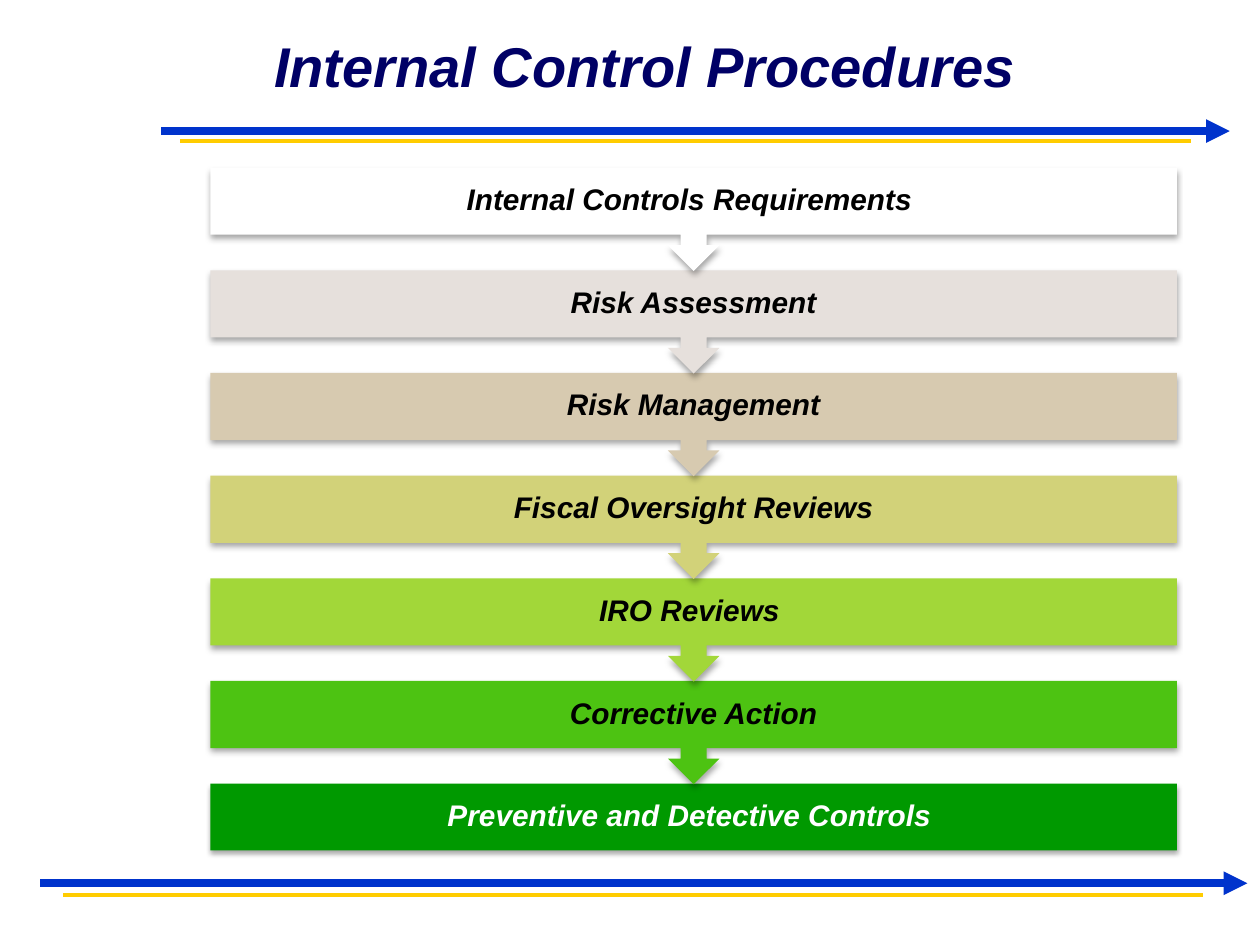
from lxml.etree import SubElement
from pptx import Presentation
from pptx.dml.color import RGBColor
from pptx.enum.shapes import MSO_CONNECTOR, MSO_SHAPE
from pptx.enum.text import MSO_ANCHOR, PP_ALIGN
from pptx.oxml.ns import qn
from pptx.util import Inches, Pt

NAVY = RGBColor(0x00, 0x00, 0x66)
BLUE = RGBColor(0x00, 0x33, 0xCC)
GOLD = RGBColor(0xFF, 0xCC, 0x00)
BLACK = RGBColor(0x00, 0x00, 0x00)
WHITE = RGBColor(0xFF, 0xFF, 0xFF)
STEPS = [
    ("Internal Controls Requirements ", WHITE),
    ("Risk Assessment", RGBColor(0xE6, 0xE0, 0xDC)),
    ("Risk Management", RGBColor(0xD7, 0xCA, 0xB0)),
    ("Fiscal Oversight Reviews", RGBColor(0xD2, 0xD2, 0x79)),
    ("IRO Reviews ", RGBColor(0xA2, 0xD7, 0x39)),
    ("Corrective Action", RGBColor(0x4D, 0xC3, 0x12)),
    ("Preventive and Detective Controls ", RGBColor(0x00, 0x99, 0x00)),
]
LEFT, TOP, WIDTH = 1.67, 1.33, 7.67
PITCH, BAR, CALL = 0.815, 0.53, 0.82


def place(shape, left, top, width, height):
    shape.left, shape.top = Inches(left), Inches(top)
    shape.width, shape.height = Inches(width), Inches(height)


def write(shape, text, size, color, side, edge):
    frame = shape.text_frame
    frame.word_wrap = True
    frame.vertical_anchor = MSO_ANCHOR.MIDDLE
    frame.margin_left = frame.margin_right = Inches(side)
    frame.margin_top = frame.margin_bottom = Inches(edge)
    frame.text = text
    para = frame.paragraphs[0]
    para.alignment = PP_ALIGN.CENTER
    para.line_spacing = 0.9
    font = para.runs[0].font
    font.name, font.size = "Arial", Pt(size)
    font.bold = font.italic = True
    font.color.rgb = color


def add_rule(slide, start, end, y, color, weight, head=False):
    rule = slide.shapes.add_connector(
        MSO_CONNECTOR.STRAIGHT, Inches(start), Inches(y), Inches(end), Inches(y))
    rule.line.color.rgb = color
    rule.line.width = Pt(weight)
    if head:
        SubElement(rule.line._get_or_add_ln(), qn("a:tailEnd"), type="triangle")
    SubElement(rule._element.spPr, qn("a:effectLst"))


def add_shadow(shape):
    shape.shadow.inherit = False
    effects = shape._element.spPr.find(qn("a:effectLst"))
    outer = SubElement(effects, qn("a:outerShdw"), blurRad=str(Pt(3.1)),
                       dist=str(Pt(1.8)), dir="5400000", rotWithShape="0")
    color = SubElement(outer, qn("a:srgbClr"), val="000000")
    SubElement(color, qn("a:alpha"), val="35000")


def add_step(slide, index):
    text, fill = STEPS[index]
    last = index == len(STEPS) - 1
    top = TOP + index * PITCH
    kind = MSO_SHAPE.RECTANGLE if last else MSO_SHAPE.UP_ARROW_CALLOUT
    shape = slide.shapes.add_shape(
        kind, Inches(LEFT), Inches(top), Inches(WIDTH), Inches(BAR if last else CALL))
    shape.rotation = 0 if last else 180
    shape.fill.solid()
    shape.fill.fore_color.rgb = fill
    shape.line.fill.background()
    add_shadow(shape)
    label = slide.shapes.add_textbox(
        Inches(LEFT), Inches(top), Inches(WIDTH), Inches(BAR))
    write(label, text, 17, WHITE if last else BLACK, 0.13, 0.13)


def main():
    deck = Presentation()
    deck.slide_width, deck.slide_height = Inches(10), Inches(7.5)
    slide = deck.slides.add_slide(deck.slide_layouts[5])
    add_rule(slide, 1.28, 9.76, 1.04, BLUE, 4.5, True)
    add_rule(slide, 1.43, 9.45, 1.12, GOLD, 2.25)
    add_rule(slide, 0.32, 9.9, 7.01, BLUE, 4.5, True)
    add_rule(slide, 0.5, 9.55, 7.1, GOLD, 2.25)
    title = slide.shapes.title
    place(title, 1.08, 0.25, 8.08, 0.54)
    write(title, "Internal Control Procedures", 32, NAVY, 0.05, 0)
    title.text_frame.paragraphs[0].line_spacing = 1.0
    for index in reversed(range(len(STEPS))):
        add_step(slide, index)
    deck.save("out.pptx")


if __name__ == "__main__":
    main()
